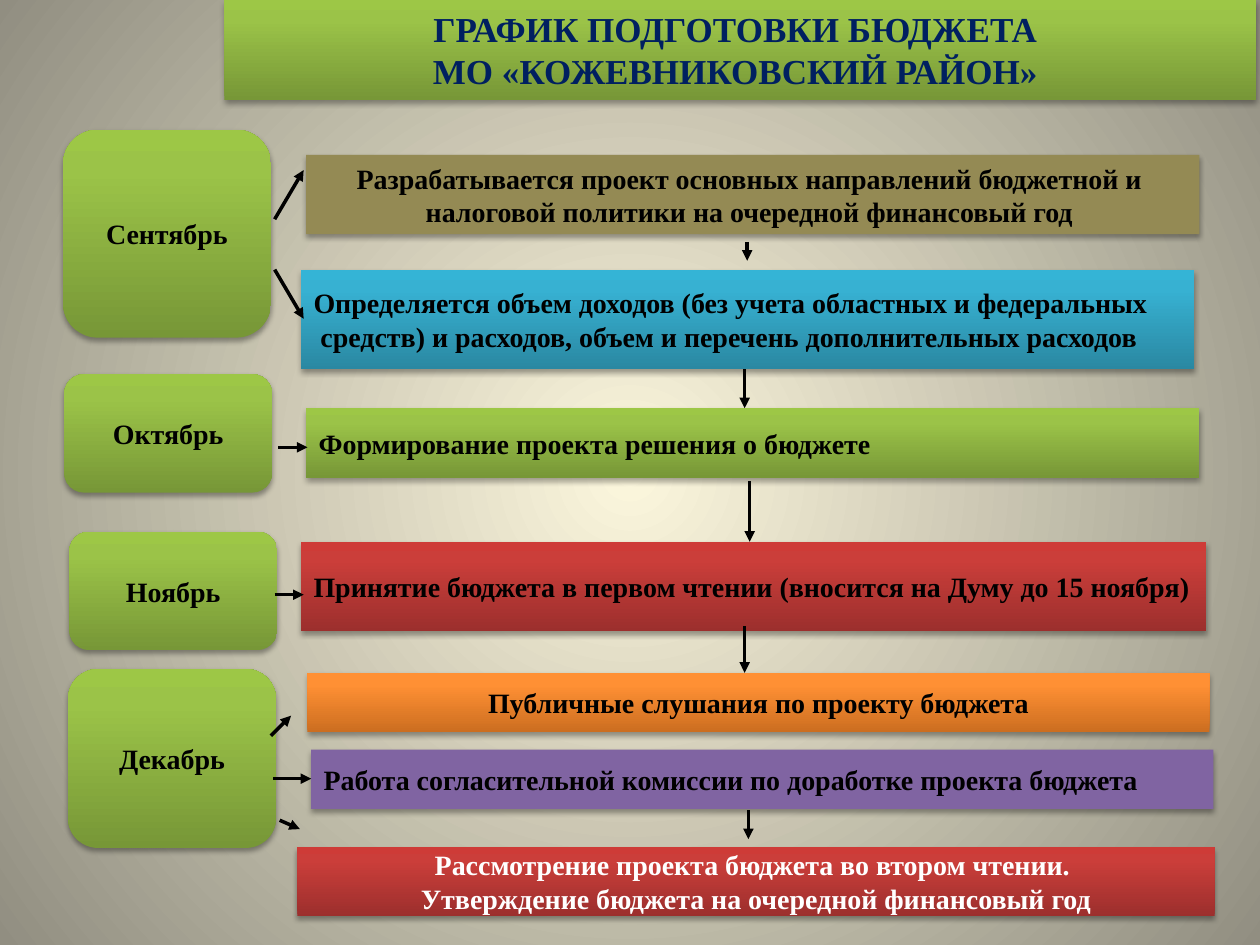
"""Build a one-slide budget preparation schedule with months, steps and arrows."""
from pptx import Presentation
from pptx.dml.color import RGBColor
from pptx.enum.shapes import MSO_CONNECTOR as CONN, MSO_SHAPE as SHAPE
from pptx.enum.text import MSO_ANCHOR, MSO_AUTO_SIZE, PP_ALIGN as ALIGN
from pptx.oxml import parse_xml
from pptx.oxml.ns import nsdecls, qn
from pptx.util import Inches, Pt

COLORS = {"navy": "002060", "black": "000000", "white": "FFFFFF",
          "olive": "948A54", "purple": "8064A2"}
GRADIENTS = {
    "green": {0: "779737", 80: "9BC348", 100: "9DC746"},
    "red": {0: "9C2F2D", 80: "CB3E3A", 100: "CE3B37"},
    "blue": {0: "2A88A2", 80: "37B1D2", 100: "34B4D6"},
    "orange": {0: "CC6E20", 80: "FF9034", 100: "FF9136"},
    "backdrop": {0: "FCF7DD", 100: "918E81"},
}


def write(tf, text, size=16, color="black", align=ALIGN.CENTER, right=0.1):
    tf.text = text
    tf.word_wrap = True
    tf.auto_size = MSO_AUTO_SIZE.NONE
    tf.vertical_anchor = MSO_ANCHOR.MIDDLE
    tf.margin_right = Inches(right)
    for p in tf.paragraphs:
        p.alignment = align
        for r in p.runs:
            r.font.name = "Times New Roman"
            r.font.size = Pt(size)
            r.font.bold = True
            r.font.color.rgb = RGBColor.from_string(COLORS[color])


def paint(fill, element, name):
    if name in COLORS:
        fill.solid()
        fill.fore_color.rgb = RGBColor.from_string(COLORS[name])
        return
    fill.gradient()
    fill.gradient_angle = 90
    stops = "".join(f'<a:gs pos="{pos * 1000}"><a:srgbClr val="{rgb}"/></a:gs>'
                    for pos, rgb in GRADIENTS[name].items())
    old = element.find(".//" + qn("a:gsLst"))
    old.getparent().replace(old, parse_xml(f'<a:gsLst {nsdecls("a")}>{stops}</a:gsLst>'))


prs = Presentation()
prs.slide_width, prs.slide_height = Inches(10), Inches(7.5)
s = prs.slides.add_slide(prs.slide_layouts[5])

paint(s.background.fill, s.element, "backdrop")
lin = s.element.find(".//" + qn("a:lin"))
lin.getparent().replace(lin, parse_xml(
    f'<a:path {nsdecls("a")} path="circle">'
    '<a:fillToRect l="50000" t="50000" r="50000" b="50000"/></a:path>'))

title = s.shapes.title
title.left, title.top, title.width, title.height = map(Inches, (1.78, 0, 8.19, 0.79))
write(title.text_frame, "ГРАФИК ПОДГОТОВКИ БЮДЖЕТА\vМО «КОЖЕВНИКОВСКИЙ РАЙОН»",
      size=20, color="navy", right=0.18)
boxes = [(title, "green")]

months = [
    ("Сентябрь", 0.5, 1.03, 1.65),
    ("Октябрь", 0.51, 2.97, 0.94),
    ("Ноябрь", 0.55, 4.22, 0.94),
    ("Декабрь", 0.54, 5.31, 1.42),
]
for text, x, y, h in months:
    sp = s.shapes.add_shape(SHAPE.ROUNDED_RECTANGLE, Inches(x), Inches(y), Inches(1.65), Inches(h))
    write(sp.text_frame, text)
    boxes.append((sp, "green"))

center = {}
left = {"align": ALIGN.LEFT, "right": 0}
steps = [
    ("Разрабатывается проект основных направлений бюджетной и \n"
     "налоговой политики на очередной финансовый год ",
     "olive", (2.43, 1.23, 7.09, 0.63), center),
    ("Определяется объем доходов (без учета областных и федеральных\n"
     " средств) и расходов, объем и перечень дополнительных расходов",
     "blue", (2.39, 2.14, 7.09, 0.79), left),
    ("Формирование проекта решения о бюджете",
     "green", (2.43, 3.24, 7.09, 0.55), left),
    ("Принятие бюджета в первом чтении (вносится на Думу до 15 ноября)",
     "red", (2.39, 4.3, 7.18, 0.71), left),
    ("Публичные слушания по проекту бюджета",
     "orange", (2.44, 5.34, 7.16, 0.47), center),
    ("Работа согласительной комиссии по доработке проекта бюджета",
     "purple", (2.47, 5.95, 7.16, 0.47), left),
    ("Рассмотрение проекта бюджета во втором чтении. \n"
     "Утверждение бюджета на очередной финансовый год",
     "red", (2.36, 6.72, 7.28, 0.55), {"color": "white"}),
]
for text, color, place, style in steps:
    sp = s.shapes.add_shape(SHAPE.RECTANGLE, *map(Inches, place))
    write(sp.text_frame, text, **style)
    boxes.append((sp, color))

for sp, color in boxes:
    paint(sp.fill, sp.element, color)
    sp.line.fill.background()
    sp.shadow.inherit = False
    sp.element.spPr.find(qn("a:effectLst")).append(parse_xml(
        f'<a:outerShdw {nsdecls("a")} blurRad="{Pt(3.1)}" dist="{Pt(1.8)}" dir="5400000" '
        'rotWithShape="0"><a:srgbClr val="000000"><a:alpha val="35000"/></a:srgbClr></a:outerShdw>'))

arrows = [
    (2.18, 1.74, 2.41, 1.35), (2.18, 2.14, 2.41, 2.53), (2.21, 3.55, 2.44, 3.55),
    (2.18, 4.72, 2.41, 4.72), (2.15, 5.84, 2.31, 5.68), (2.17, 6.18, 2.47, 6.18),
    (2.22, 6.51, 2.38, 6.58),
    (5.93, 1.92, 5.93, 2.07), (5.91, 2.93, 5.91, 3.24), (5.95, 3.82, 5.95, 4.3),
    (5.91, 4.97, 5.91, 5.34), (5.94, 6.43, 5.94, 6.66),
]
for ends in arrows:
    arrow = s.shapes.add_connector(CONN.STRAIGHT, *map(Inches, ends))
    arrow.line.width = Pt(2)
    arrow.line.color.rgb = RGBColor.from_string(COLORS["black"])
    arrow.line._get_or_add_ln().append(parse_xml(f'<a:tailEnd {nsdecls("a")} type="triangle"/>'))
    arrow._element.spPr.append(parse_xml(f'<a:effectLst {nsdecls("a")}/>'))

prs.save("out.pptx")
